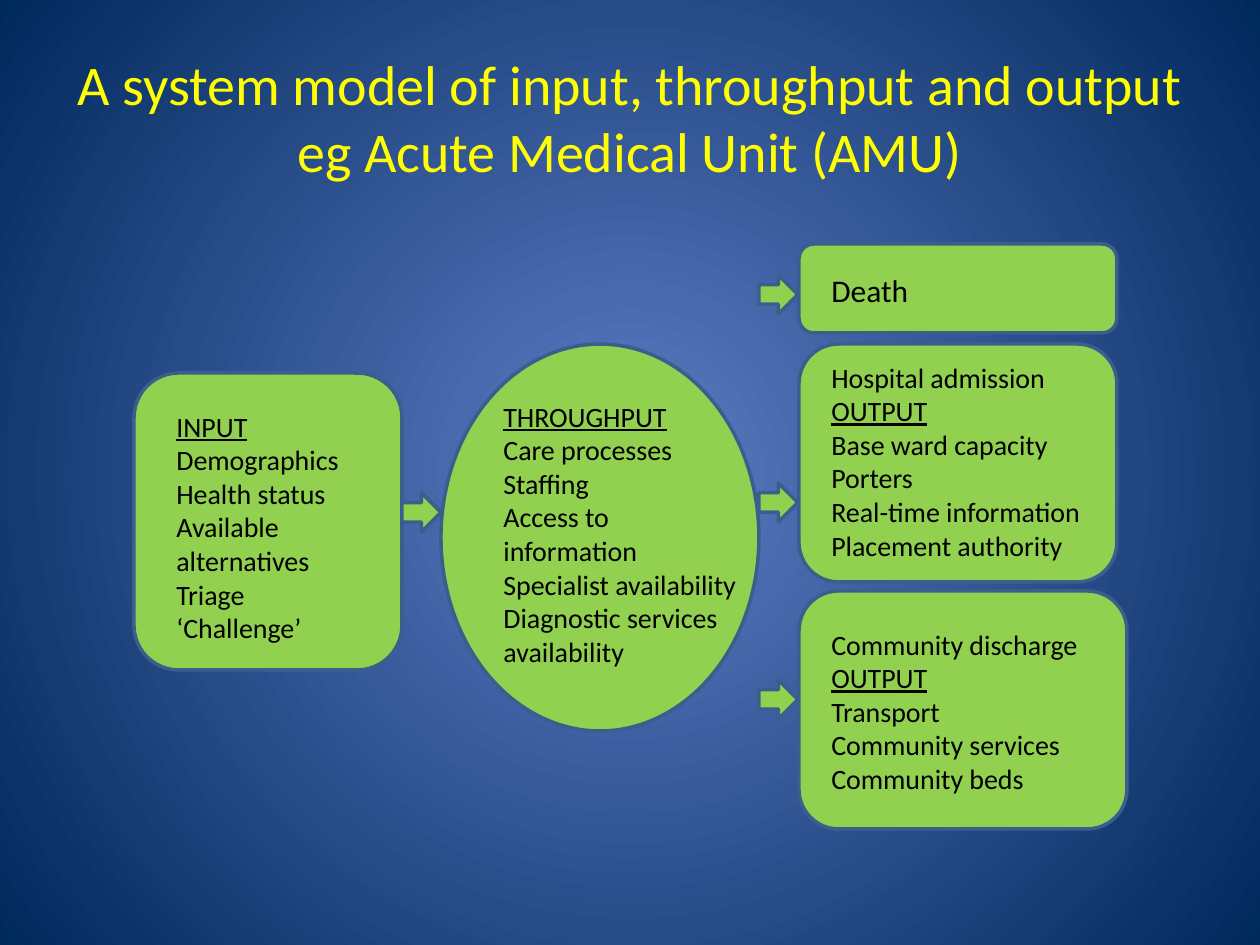
from lxml import etree
from pptx import Presentation
from pptx.dml.color import RGBColor
from pptx.enum.shapes import MSO_SHAPE
from pptx.enum.text import MSO_ANCHOR, MSO_AUTO_SIZE, PP_ALIGN
from pptx.oxml.ns import qn
from pptx.util import Emu, Pt

ROUNDED = MSO_SHAPE.ROUNDED_RECTANGLE
OVAL = MSO_SHAPE.OVAL
ARROW = MSO_SHAPE.RIGHT_ARROW
LEFT = PP_ALIGN.LEFT
CENTER = PP_ALIGN.CENTER
MIDDLE = MSO_ANCHOR.MIDDLE
GROW = MSO_AUTO_SIZE.SHAPE_TO_FIT_TEXT

YELLOW = RGBColor(0xFF, 0xFF, 0x00)
BLACK = RGBColor(0x00, 0x00, 0x00)
GREEN = RGBColor(0x92, 0xD0, 0x50)
OUTLINE = RGBColor(0x3A, 0x5F, 0x8C)
GLOW = RGBColor(0x5E, 0x7C, 0xC5)
NAVY = RGBColor(0x00, 0x29, 0x5C)

PIXELS_PER_INCH = 126
ARROW_SIZE = 39
INPUT_RIGHT = 402
THROUGHPUT_RIGHT = 759
OUTPUT_LEFT = 799
OUTPUT_TEXT_LEFT = 819

STAGES = [
    (ROUNDED, 134, 373, 268, 297),
    (ROUNDED, OUTPUT_LEFT, 591, 328, 238),
    (ROUNDED, OUTPUT_LEFT, 344, 318, 238),
    (ROUNDED, OUTPUT_LEFT, 244, 318, 89),
    (OVAL, 441, 344, 318, 387),
]
LABELS = [
    ((164, 403, 208, 251), 16, "INPUT",
     "INPUT\nDemographics\nHealth status\nAvailable alternatives\nTriage\n‘Challenge’"),
    ((491, 393, 268, 352), 16, "THROUGHPUT",
     "THROUGHPUT\nCare processes\nStaffing\nAccess to information\n"
     "Specialist availability\nDiagnostic services availability"),
    ((OUTPUT_TEXT_LEFT, 265, 218, 50), 18, None, "Death"),
    ((OUTPUT_TEXT_LEFT, 354, 287, 255), 16, "OUTPUT",
     "Hospital admission\nOUTPUT\nBase ward capacity\nPorters\n"
     "Real-time information\nPlacement authority"),
    ((OUTPUT_TEXT_LEFT, 621, 287, 217), 16, "OUTPUT",
     "Community discharge\nOUTPUT\nTransport\nCommunity services\nCommunity beds"),
]
ARROWS = [
    (THROUGHPUT_RIGHT, 483),
    (INPUT_RIGHT, 493),
    (THROUGHPUT_RIGHT, 680),
    (THROUGHPUT_RIGHT, 275),
]


def px(length):
    return Emu(round(length * 914400 / PIXELS_PER_INCH))


def write(text_frame, text, size=16, color=BLACK, font="Calibri", align=LEFT, heading=None):
    text_frame.word_wrap = True
    for index, line in enumerate(text.split("\n")):
        paragraph = text_frame.paragraphs[0] if index == 0 else text_frame.add_paragraph()
        paragraph.text = line
        paragraph.alignment = align
        for run in paragraph.runs:
            run.font.name = font
            run.font.size = Pt(size)
            run.font.color.rgb = color
            run.font.underline = line == heading


class SystemModelSlide:
    fill = GREEN
    line = OUTLINE
    line_width = Pt(2)

    def __init__(self, presentation):
        self.slide = presentation.slides.add_slide(presentation.slide_layouts[5])

    def background(self, center, edge):
        fill = self.slide.background.fill
        fill.gradient()
        for stop, color, position in zip(fill.gradient_stops, (center, edge), (0, 1)):
            stop.color.rgb = color
            stop.position = position
        gradient = self.slide.element.find(".//" + qn("a:gradFill"))
        gradient.remove(gradient.find(qn("a:lin")))
        radial = etree.SubElement(gradient, qn("a:path"), {"path": "circle"})
        sides = {side: "50000" for side in "ltrb"}
        etree.SubElement(radial, qn("a:fillToRect"), sides)

    def title(self, text, left, top, width, height):
        title = self.slide.shapes.title
        title.left, title.top = px(left), px(top)
        title.width, title.height = px(width), px(height)
        title.text_frame.vertical_anchor = MIDDLE
        write(title.text_frame, text, size=32, color=YELLOW, align=CENTER)

    def shape(self, kind, left, top, width, height):
        shape = self.slide.shapes.add_shape(kind, px(left), px(top), px(width), px(height))
        shape.shadow.inherit = False
        shape.fill.solid()
        shape.fill.fore_color.rgb = self.fill
        shape.line.color.rgb = self.line
        shape.line.width = self.line_width

    def label(self, text, box, **text_format):
        label = self.slide.shapes.add_textbox(*map(px, box))
        write(label.text_frame, text, **text_format)
        label.text_frame.auto_size = GROW


def main():
    presentation = Presentation()
    presentation.slide_width = px(1260)
    presentation.slide_height = px(945)
    model = SystemModelSlide(presentation)
    model.background(GLOW, NAVY)
    model.title(
        "A system model of input, throughput and output\veg Acute Medical Unit (AMU)",
        63, 38, 1134, 158,
    )
    for stage in STAGES:
        model.shape(*stage)
    for box, size, heading, text in LABELS:
        model.label(text, box, size=size, heading=heading)
    for left, top in ARROWS:
        model.shape(ARROW, left, top, ARROW_SIZE, ARROW_SIZE)
    presentation.save("out.pptx")


if __name__ == "__main__":
    main()
